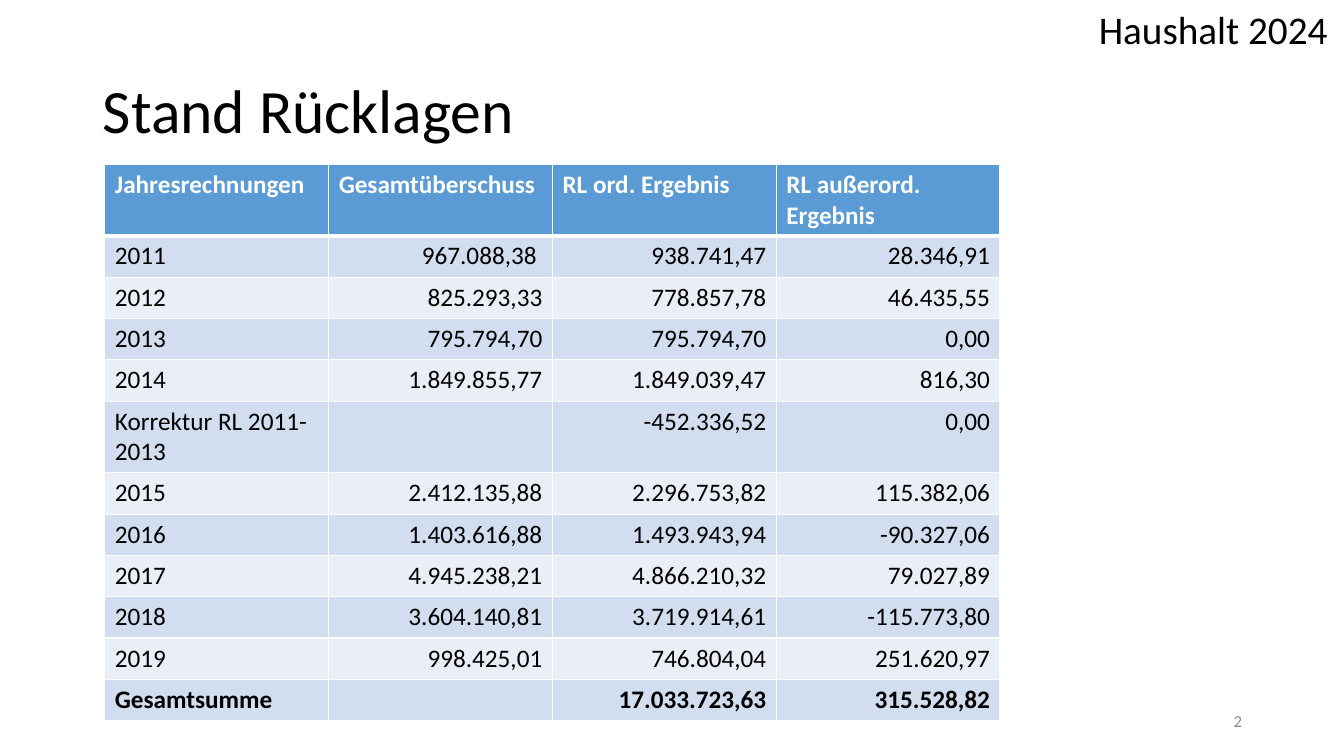
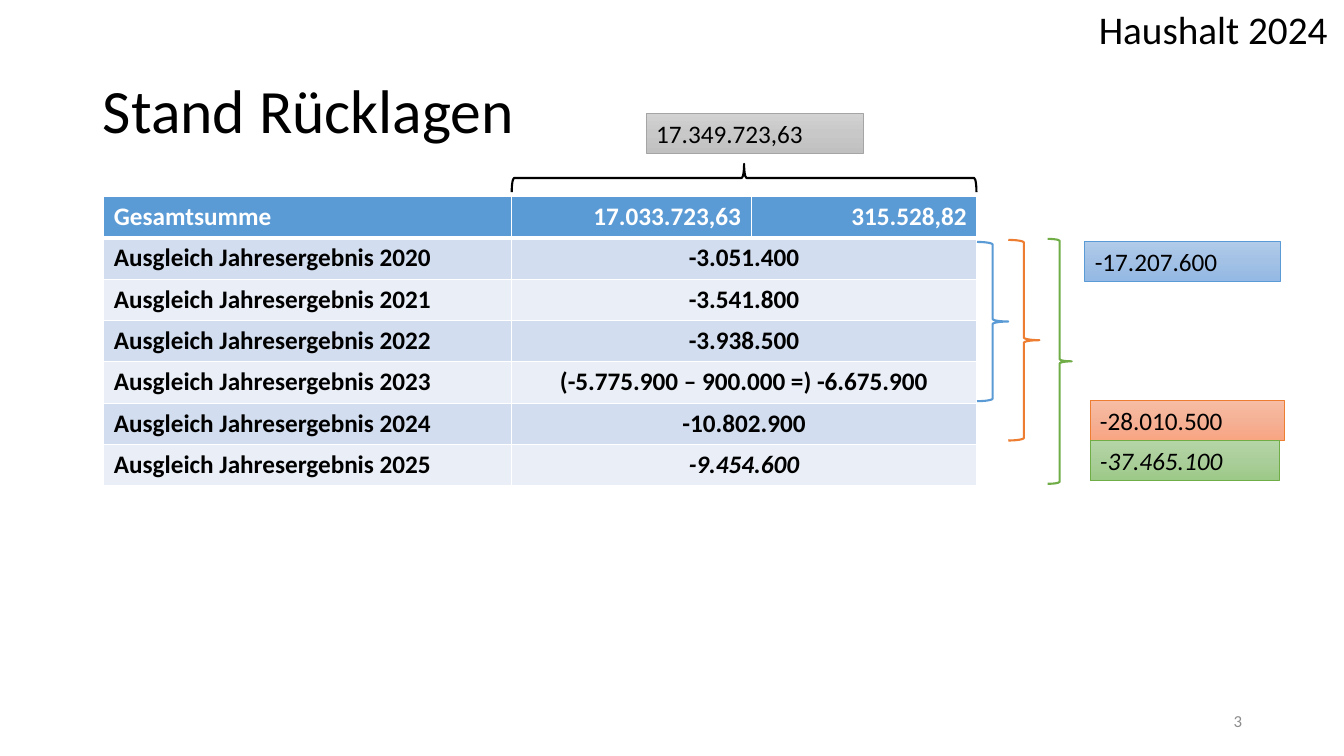
from copy import deepcopy
from dataclasses import dataclass

from lxml import etree
from pptx import Presentation
from pptx.dml.color import RGBColor
from pptx.enum import shapes, text
from pptx.oxml import ns
from pptx.util import Inches, Pt

LEFT, CENTER, RIGHT = text.PP_ALIGN.LEFT, text.PP_ALIGN.CENTER, text.PP_ALIGN.RIGHT


@dataclass(frozen=True)
class Theme:
    font: str = "Calibri"
    title_size: int = 44
    header_size: int = 28
    body_size: int = 18
    number_size: int = 12
    ink: str = "000000"
    paper: str = "FFFFFF"
    muted: str = "8C8C8C"
    blue: str = "5B9BD5"
    orange: str = "ED7D31"
    green: str = "70AD47"
    gray: str = "A5A5A5"
    bands: tuple = ("EAEFF7", "D2DEEF")
    blue_blend: tuple = ("B1CBE9", "A3C1E5", "93B9E4")
    orange_blend: tuple = ("F7BDA5", "F5B196", "F8A582")
    green_blend: tuple = ("B5D5A7", "AACE9A", "9CC987")
    gray_blend: tuple = ("D2D2D2", "C8C8C8", "C0C0C0")


THEME = Theme()


def rgb(value):
    return RGBColor.from_string(value)


def write(frame, words, size=THEME.body_size, color=THEME.ink, bold=False,
          italic=False, align=LEFT, spacing=None):
    para = frame.paragraphs[0]
    para.alignment = align
    if spacing:
        para.line_spacing = spacing
    if words:
        span = para.add_run()
        span.text = words
        span.font.name = THEME.font
        span.font.size = Pt(size)
        span.font.bold = bold
        span.font.italic = italic
        span.font.color.rgb = rgb(color)


def place(shape, left, top, width, height):
    shape.left, shape.top = Inches(left), Inches(top)
    shape.width, shape.height = Inches(width), Inches(height)


def border_cell(cell, top, bottom):
    """Draw the cell's borders; top and bottom are line widths in points."""
    properties = cell._tc.get_or_add_tcPr()
    for index, (side, width) in enumerate(zip("LRTB", (1, 1, top, bottom))):
        line = etree.Element(ns.qn(f"a:ln{side}"), w=str(Pt(width)))
        fill = etree.SubElement(line, ns.qn("a:solidFill"))
        etree.SubElement(fill, ns.qn("a:srgbClr"), val=THEME.paper)
        properties.insert(index, line)


class BudgetDeck:
    def __init__(self):
        self.deck = Presentation()
        self.deck.slide_width, self.deck.slide_height = Inches(13.33), Inches(7.5)
        self.layout = self.deck.slide_layouts.get_by_name("Title Only")
        self.page = None

    def add_page(self, title, number):
        self.page = self.deck.slides.add_slide(self.layout)
        heading = self.page.shapes.title
        place(heading, 0.92, 0.4, 6.52, 1.45)
        heading.text_frame.vertical_anchor = text.MSO_ANCHOR.MIDDLE
        heading.text_frame.auto_size = text.MSO_AUTO_SIZE.NONE
        write(heading.text_frame, title, size=THEME.title_size, spacing=0.9)
        self.add_number(number)

    def add_number(self, number):
        kind = shapes.PP_PLACEHOLDER.SLIDE_NUMBER
        source = next(holder for holder in self.layout.placeholders
                      if holder.placeholder_format.type == kind)
        self.page.shapes.element.append(deepcopy(source.element))
        box = self.page.shapes[-1]
        place(box, 9.42, 6.95, 3, 0.4)
        for child in list(box.text_frame.paragraphs[0]._p):
            child.getparent().remove(child)
        box.text_frame.vertical_anchor = text.MSO_ANCHOR.MIDDLE
        write(box.text_frame, str(number), size=THEME.number_size,
              color=THEME.muted, align=RIGHT)

    def set_header(self, words):
        """Put the running header on the layout, so every page shows it."""
        box = self.page.shapes.add_textbox(
            Inches(10.8), Inches(0), Inches(2.54), Inches(0.57))
        box.text_frame.word_wrap = True
        box.text_frame.auto_size = text.MSO_AUTO_SIZE.SHAPE_TO_FIT_TEXT
        write(box.text_frame, words, size=THEME.header_size)
        box.element.nvSpPr.cNvPr.set("id", "20")
        self.layout.shapes.element.append(box.element)

    def add_table(self, left, top, widths, rows, head_align, body_align,
                  bold_rows, italic_rows=()):
        """Fill a banded table; a row short of cells merges its last one across."""
        row_height = 0.41
        table = self.page.shapes.add_table(
            len(rows), len(widths), Inches(left), Inches(top),
            Inches(sum(widths)), Inches(row_height * len(rows))).table
        table.horz_banding = False
        for column, width in zip(table.columns, widths):
            column.width = Inches(width)
        for r, values in enumerate(rows):
            table.rows[r].height = Inches(row_height)
            for c in range(len(widths)):
                cell = table.cell(r, c)
                cell.fill.solid()
                cell.fill.fore_color.rgb = rgb(THEME.bands[r % 2] if r else THEME.blue)
                border_cell(cell, top=3 if r == 1 else 1, bottom=1 if r else 3)
            if len(values) < len(widths):
                table.cell(r, len(values) - 1).merge(table.cell(r, len(widths) - 1))
            for c, value in enumerate(values):
                align = body_align if r else head_align
                write(table.cell(r, c).text_frame, value,
                      color=THEME.ink if r else THEME.paper, bold=r in bold_rows,
                      italic=c > 0 and r in italic_rows, align=align if c else LEFT)

    def add_shape(self, kind, left, top, width, height, color, weight):
        shape = self.page.shapes.add_shape(
            kind, Inches(left), Inches(top), Inches(width), Inches(height))
        shape.shadow.inherit = False
        shape.line.color.rgb = rgb(color)
        shape.line.width = Pt(weight)
        return shape

    def add_brace(self, left, top, width, height, color, rotation=0):
        brace = self.add_shape(shapes.MSO_SHAPE.RIGHT_BRACE, left, top, width, height,
                               color, 1.5)
        brace.fill.background()
        brace.rotation = rotation

    def add_sum(self, words, left, top, width, color, blend, italic=False):
        box = self.add_shape(shapes.MSO_SHAPE.RECTANGLE, left, top, width, 0.4, color, 0.5)
        box.fill.gradient()
        box.fill.gradient_angle = 270
        stops = box.element.find(".//" + ns.qn("a:gsLst"))
        stops.insert(1, deepcopy(stops[0]))
        for stop, position, shade in zip(box.fill.gradient_stops, (0, 0.5, 1), blend):
            stop.position = position
            stop.color.rgb = rgb(shade)
        box.text_frame.word_wrap = True
        box.text_frame.auto_size = text.MSO_AUTO_SIZE.SHAPE_TO_FIT_TEXT
        box.text_frame.vertical_anchor = text.MSO_ANCHOR.TOP
        write(box.text_frame, words, italic=italic)


RESERVES = [
    ("Jahresrechnungen", "Gesamtüberschuss", "RL ord. Ergebnis", "RL außerord. Ergebnis"),
    ("2011", "967.088,38 ", "938.741,47", "28.346,91"),
    ("2012", "825.293,33", "778.857,78", "46.435,55"),
    ("2013", "795.794,70", "795.794,70", "0,00"),
    ("2014", "1.849.855,77", "1.849.039,47", "816,30"),
    ("Korrektur RL 2011-2013", "", "-452.336,52", "0,00"),
    ("2015", "2.412.135,88", "2.296.753,82", "115.382,06"),
    ("2016", "1.403.616,88", "1.493.943,94", "-90.327,06"),
    ("2017", "4.945.238,21", "4.866.210,32", "79.027,89"),
    ("2018", "3.604.140,81", "3.719.914,61", "-115.773,80"),
    ("2019", "998.425,01", "746.804,04", "251.620,97"),
    ("Gesamtsumme", "", "17.033.723,63", "315.528,82"),
]
OFFSETS = ["-3.051.400", "-3.541.800", "-3.938.500",
           "(-5.775.900 – 900.000 =) -6.675.900", "-10.802.900", "-9.454.600"]


def main():
    budget = BudgetDeck()
    title = "Stand Rücklagen"

    budget.add_page(title, 2)
    budget.set_header("Haushalt 2024")
    budget.add_table(1.04, 1.63, [2.22] * 4, RESERVES, head_align=LEFT,
                     body_align=RIGHT, bold_rows=(0, len(RESERVES) - 1))

    budget.add_page(title, 3)
    rows = [("Gesamtsumme", *RESERVES[-1][2:])]
    rows += [(f"Ausgleich Jahresergebnis {year}", amount)
             for year, amount in enumerate(OFFSETS, 2020)]
    budget.add_table(1.03, 1.95, [4.04, 2.38, 2.24], rows, head_align=RIGHT,
                     body_align=CENTER, bold_rows=range(len(rows)),
                     italic_rows=(len(rows) - 1,))
    budget.add_brace(9.69, 2.4, 0.31, 1.58, THEME.blue)
    budget.add_sum("-17.207.600", 10.76, 2.39, 1.94, THEME.blue, THEME.blue_blend)
    budget.add_brace(10, 2.38, 0.31, 1.99, THEME.orange)
    budget.add_sum("-28.010.500", 10.81, 3.97, 1.93, THEME.orange, THEME.orange_blend)
    budget.add_brace(10.39, 2.37, 0.24, 2.43, THEME.green)
    budget.add_sum("-37.465.100", 10.81, 4.37, 1.88, THEME.green, THEME.green_blend,
                   italic=True)
    budget.add_brace(7.24, -0.54, 0.28, 4.61, THEME.ink, rotation=270)
    budget.add_sum("17.349.723,63", 6.41, 1.12, 2.15, THEME.gray, THEME.gray_blend)

    budget.deck.save("out.pptx")


if __name__ == "__main__":
    main()
